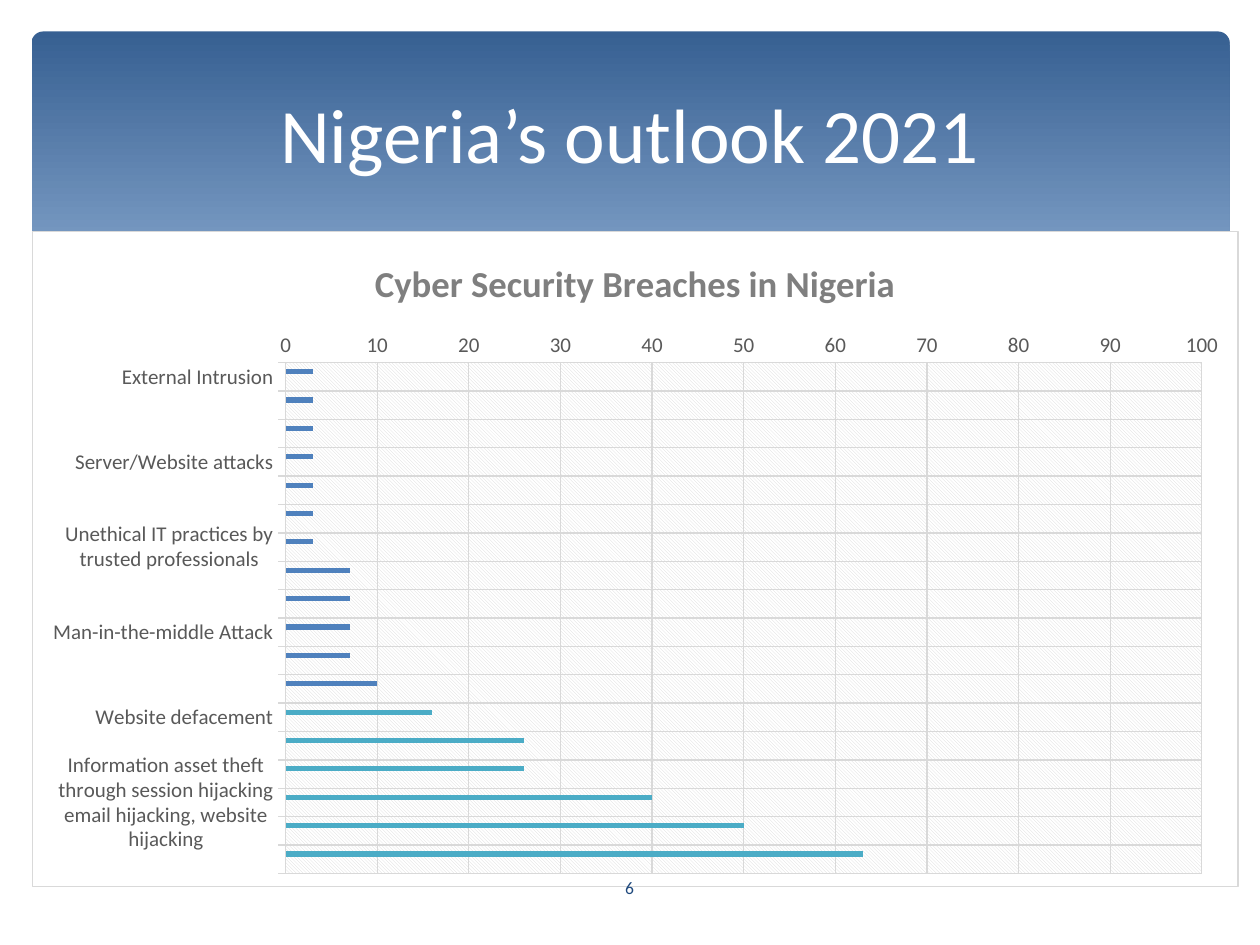
from pptx import Presentation
from pptx.chart.data import CategoryChartData as Data
from pptx.dml.color import RGBColor
from pptx.enum.chart import XL_CHART_TYPE as Kind, XL_TICK_MARK as Tick
from pptx.enum.shapes import MSO_SHAPE as Shape
from pptx.enum.text import MSO_ANCHOR as Anchor, PP_ALIGN as Align
from pptx.oxml import parse_xml
from pptx.util import Pt

FACE = "Calibri"
GREY = "D9D9D9"
NS = ('xmlns:c="http://schemas.openxmlformats.org/drawingml/2006/chart" '
      'xmlns:a="http://schemas.openxmlformats.org/drawingml/2006/main"')

BREACHES = [
    ("External Intrusion", 3),
    ("Software Piracy", 3),
    ("Copyright infringements", 3),
    ("Server/Website attacks", 3),
    ("Privacy and Industrial espionage", 3),
    ("Encryption of Trojan Codes and confidential information", 3),
    ("Unethical IT practices by trusted professionals", 3),
    ("Denial of Service", 7),
    ("Unautorised access to credentials", 7),
    ("Man-in-the-middle Attack", 7),
    ("Pharming", 7),
    ("Network and application level intrusions", 10),
    ("Website defacement", 16),
    ("Malware attacks, keyloggers, botnets", 26),
    ("Insider threats/help, in house security beaches, data leakage, "
     "trading of customers'information", 26),
    ("Information asset theft through session hijacking email hijacking, "
     "website hijacking", 40),
    ("Financial fraud and embezzelment, ATM fraud, mobile fraud, web fraud, "
     "POS fraud", 50),
    ("Social engineering attacks-phishing emails, 419 Scams, identity theft, "
     "unauthorised physical access website cloning", 63),
]
MAJOR = 12  # first of the most frequent breaches

# Top edge of the white wave, as offsets from its box
WAVE = [(0, 21), (26, 12), (52, 5), (97, 0), (137, 0), (192, 4), (246, 13),
        (305, 26), (364, 40), (417, 50), (464, 58), (509, 64), (554, 67),
        (595, 65), (631, 61), (660, 54), (687, 45)]


def color(text):
    return RGBColor.from_string(text)


def style(font, size, tint, bold=False):
    font.name, font.size, font.bold = FACE, Pt(size), bold
    font.color.rgb = color(tint)


def label(slide, box, text, size, tint):
    frame = slide.shapes.add_textbox(*map(Pt, box)).text_frame
    frame.word_wrap = True
    frame.vertical_anchor = Anchor.MIDDLE
    para = frame.paragraphs[0]
    para.alignment = Align.CENTER
    run = para.add_run()
    run.text = text
    style(run.font, size, tint)


def banner(slide, box):
    """Blue gradient band with a white wave across its lower part."""
    left, top, width, height = box
    band = slide.shapes.add_shape(Shape.ROUNDED_RECTANGLE, *map(Pt, box))
    band.adjustments[0] = 0.034
    band.shadow.inherit = False
    band.line.fill.background()
    band.fill.gradient()
    band.fill.gradient_angle = 270
    stops = [("376092", 0), ("95B3D7", 0.9)]
    for stop, (tint, place) in zip(band.fill.gradient_stops, stops):
        stop.color.rgb, stop.position = color(tint), place

    x, y = left - 1, top + 114.5
    edge = WAVE + [(687, 104), (0, 104)]
    points = [(Pt(x + dx), Pt(y + dy)) for dx, dy in edge]
    pen = slide.shapes.build_freeform(*points[0])
    pen.add_line_segments(points[1:], close=True)
    wave = pen.convert_to_shape()
    wave.shadow.inherit = False
    wave.fill.solid()
    wave.fill.fore_color.rgb = color("FFFFFF")
    wave.line.fill.background()


def axes(chart):
    cat, val = chart.category_axis, chart.value_axis
    cat.reverse_order = True
    cat.major_tick_mark = Tick.OUTSIDE
    val.major_tick_mark = Tick.NONE
    val.minimum_scale, val.maximum_scale, val.major_unit = 0, 100, 10
    cat.has_major_gridlines = val.has_major_gridlines = True
    for axis in (cat, val):
        style(axis.tick_labels.font, 12, "595959")
    for item in (cat, cat.major_gridlines, val.major_gridlines):
        item.format.line.color.rgb = color(GREY)
        item.format.line.width = Pt(0.75)
    val.format.line.fill.background()


def areas(chart):
    """Place the plot and fill the plot and chart areas."""
    place = "".join(f'<c:{key} val="{num}"/>' for key, num in
                    zip("xywh", (0.21, 0.2, 0.76, 0.78)))
    plot = chart.element.xpath("c:chart/c:plotArea")[0]
    for old in plot.xpath("c:layout"):
        plot.remove(old)
    plot.insert(0, parse_xml(
        f'<c:layout {NS}><c:manualLayout><c:layoutTarget val="inner"/>'
        f'<c:xMode val="edge"/><c:yMode val="edge"/>{place}'
        '</c:manualLayout></c:layout>'))
    plot.append(parse_xml(
        f'<c:spPr {NS}><a:pattFill prst="ltDnDiag">'
        f'<a:fgClr><a:srgbClr val="{GREY}"/></a:fgClr>'
        '<a:bgClr><a:srgbClr val="FFFFFF"/></a:bgClr></a:pattFill>'
        '<a:ln><a:noFill/></a:ln></c:spPr>'))
    chart.element.xpath("c:chart")[0].addnext(parse_xml(
        f'<c:spPr {NS}><a:solidFill><a:srgbClr val="FFFFFF"/></a:solidFill>'
        f'<a:ln w="{Pt(0.75)}"><a:solidFill><a:srgbClr val="{GREY}"/>'
        '</a:solidFill></a:ln></c:spPr>'))


def graph(slide, box):
    names, counts = zip(*BREACHES)
    data = Data()
    data.categories = names
    data.add_series("Series 1", counts)
    for name in ("Series 2", "Series 3"):
        data.add_series(name, [None] * len(names))
    chart = slide.shapes.add_chart(
        Kind.BAR_CLUSTERED, *map(Pt, box), data).chart
    style(chart.font, 10, "000000")
    chart.has_legend = False
    chart.has_title = True
    title = chart.chart_title.text_frame
    title.text = "Cyber Security Breaches in Nigeria"
    style(title.paragraphs[0].runs[0].font, 21, "7F7F7F", bold=True)

    bars = chart.plots[0]
    bars.gap_width, bars.overlap = 247, 0
    bars.vary_by_categories = False
    for series, tint in zip(bars.series, ("4F81BD", "C0504D", "9BBB59")):
        series.format.fill.solid()
        series.format.fill.fore_color.rgb = color(tint)
    for index in range(MAJOR, len(names)):
        fill = bars.series[0].points[index].format.fill
        fill.solid()
        fill.fore_color.rgb = color("4BACC6")
    axes(chart)
    areas(chart)


def main():
    deck = Presentation()
    deck.slide_width, deck.slide_height = Pt(720), Pt(540)
    slide = deck.slides.add_slide(deck.slide_layouts[6])
    banner(slide, (18, 18, 684.7, 194.4))
    graph(slide, (18.2, 132, 689.6, 375))
    label(slide, (314, 492.5, 91.5, 28.8), "6", 10, "1F497D")
    label(slide, (36, 26.6, 648, 98.6), "Nigeria’s outlook 2021", 44, "FFFFFF")
    deck.save("out.pptx")


if __name__ == "__main__":
    main()
